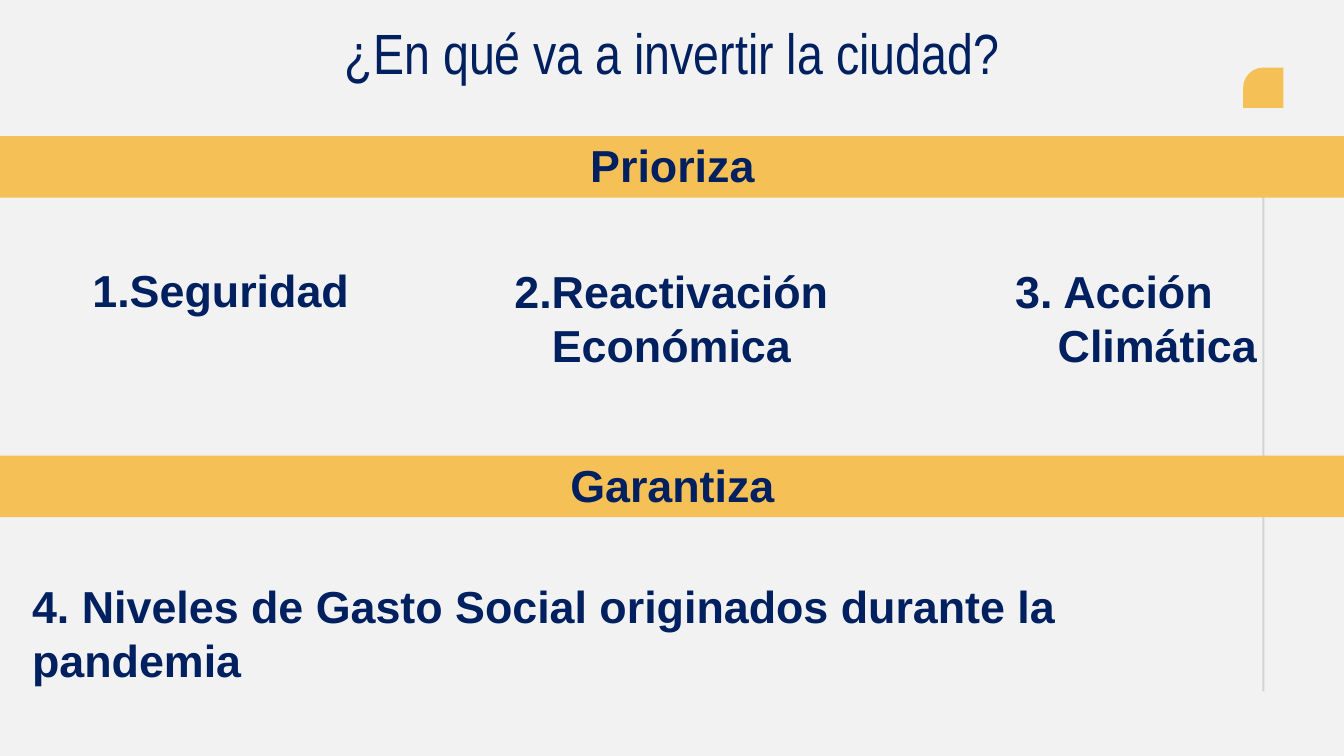
from dataclasses import dataclass

from lxml.etree import SubElement as Sub
from pptx import Presentation
from pptx.dml.color import RGBColor as Rgb
from pptx.enum.shapes import MSO_CONNECTOR as Link, MSO_SHAPE as Shape
from pptx.enum.text import MSO_ANCHOR as Anchor, MSO_AUTO_SIZE as Fit, PP_ALIGN as Align
from pptx.oxml.ns import qn
from pptx.util import Inches, Pt


@dataclass(frozen=True)
class Theme:
    """Colours, fonts and type sizes of the slide."""
    back: Rgb = Rgb(0xF2, 0xF2, 0xF2)
    gold: Rgb = Rgb(0xF5, 0xC1, 0x57)
    navy: Rgb = Rgb(0x00, 0x20, 0x60)
    rule: Rgb = Rgb(0x23, 0x2A, 0x34)
    font: str = "Arial"
    thin: str = "Arial Narrow"
    body: float = 32
    head: float = 40.5


def write(frame, text, *, font, size, color, bold=True, align=Align.CENTER, space=None, shifts=()):
    """Fill a text frame, one paragraph a line, with optional left margins."""
    frame.text = text
    for para in frame.paragraphs:
        para.alignment = align
        para.line_spacing = space
        face = para.font
        face.name, face.size, face.bold = font, Pt(size), bold
        face.color.rgb = color
    for para, shift in zip(frame.paragraphs, shifts):
        props = para._p.get_or_add_pPr()
        props.set("marL", str(Inches(shift)))
        props.set("indent", "0")


class Page:
    """Draws styled elements on one slide."""

    def __init__(self, slide, theme):
        self.slide, self.theme = slide, theme
        fill = slide.background.fill
        fill.solid()
        fill.fore_color.rgb = theme.back

    def block(self, kind, *box):
        """Add a plain gold shape."""
        shape = self.slide.shapes.add_shape(kind, *map(Inches, box))
        shape.shadow.inherit = False
        shape.fill.solid()
        shape.fill.fore_color.rgb = self.theme.gold
        shape.line.fill.background()
        return shape

    def leaf(self, left, top, side):
        """Add a square with its top left corner rounded."""
        shape = self.block(Shape.ROUND_1_RECTANGLE, left, top, side, side)
        shape.adjustments[0] = 0.5
        shape.rotation = 270

    def rule(self, left, top, end):
        """Add a faint vertical line."""
        line = self.slide.shapes.add_connector(
            Link.STRAIGHT, *map(Inches, (left, top, left, end)))
        line.line.width = Pt(1.5)
        line.line.color.rgb = self.theme.rule
        props = line._element.spPr
        tint = next(props.iter(qn("a:srgbClr")))
        Sub(tint, qn("a:alpha")).set("val", "15000")
        Sub(props, qn("a:effectLst"))

    def text(self, text, *box, anchor=Anchor.TOP, fit=Fit.SHAPE_TO_FIT_TEXT, **style):
        """Add a wrapped text box in the body style unless told otherwise."""
        frame = self.slide.shapes.add_textbox(*map(Inches, box)).text_frame
        frame.word_wrap = True
        frame.auto_size = fit
        frame.vertical_anchor = anchor
        look = self.theme
        base = dict(font=look.font, size=look.body, color=look.navy)
        write(frame, text, **(base | style))

    def band(self, text, top):
        """Add a full-width band with its heading."""
        self.block(Shape.RECTANGLE, 0, top, 13.33, 0.61)
        self.text(text, 4.48, top - 0.03, 4.38, 0.64)


def main():
    """Build the slide and save it."""
    deck = Presentation()
    deck.slide_width, deck.slide_height = Inches(13.33), Inches(7.5)
    theme = Theme()
    page = Page(deck.slides.add_slide(deck.slide_layouts[6]), theme)
    page.leaf(12.33, 0.67, 0.4)
    page.rule(12.53, 1.36, 6.86)
    for text, top in (("Prioriza", 1.35), ("Garantiza", 4.52)):
        page.band(text, top)
    page.text("1.Seguridad", 0.45, 2.56, 3.48, 0.64)
    page.text("2.Reactivación\nEconómica", 4.92, 2.57, 3.48, 1.18)
    page.text("3. Acción\nClimática", 8.86, 2.57, 4.38, 1.18, shifts=(0, 0.86))
    page.text("4. Niveles de Gasto Social originados durante la pandemia",
              0.22, 5.69, 12.54, 0.64, align=Align.LEFT)
    page.text("¿En qué va a invertir la ciudad?", 0.92, 0.27, 11.5, 0.61,
              anchor=Anchor.BOTTOM, fit=Fit.NONE, font=theme.thin,
              size=theme.head, bold=False, space=0.7)
    deck.save("out.pptx")


if __name__ == "__main__":
    main()
